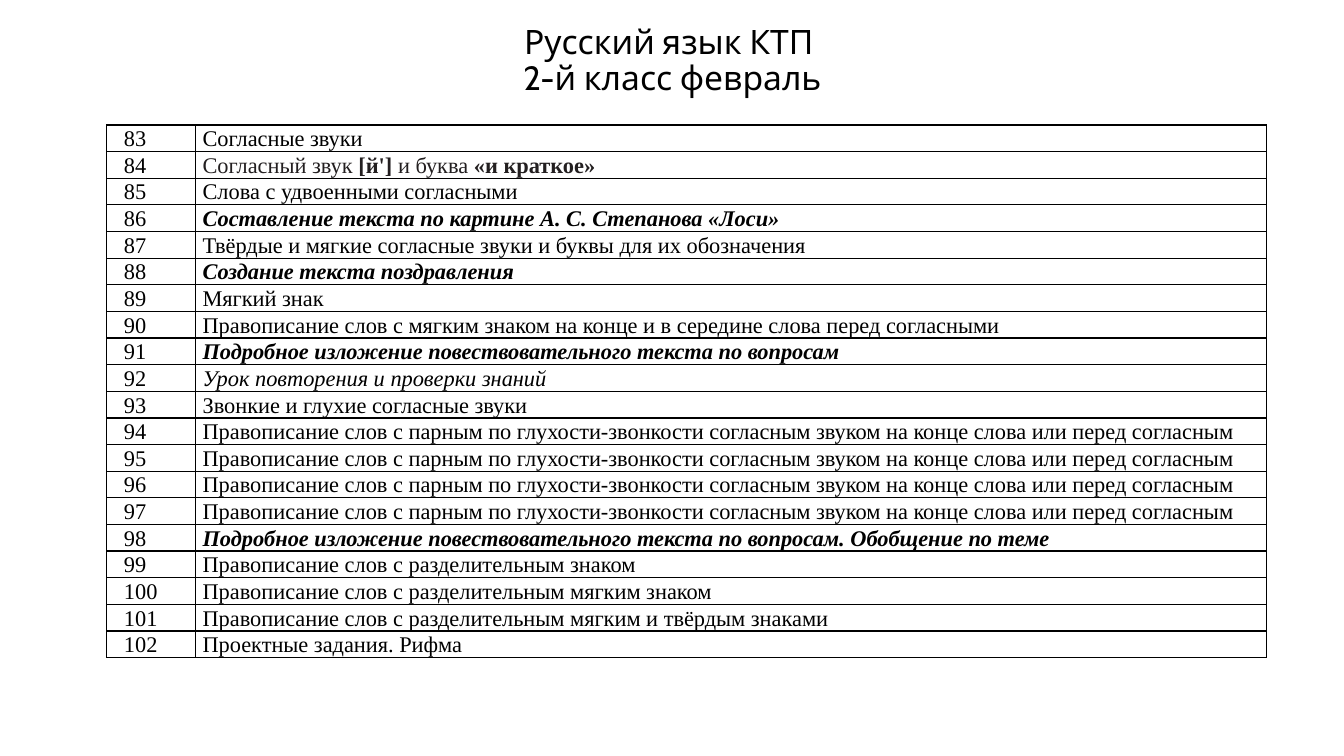
from lxml import etree
from pptx import Presentation
from pptx.dml.color import RGBColor
from pptx.enum.text import MSO_ANCHOR, PP_ALIGN
from pptx.oxml.ns import qn
from pptx.util import Pt

SCALE = 9144
BLACK = RGBColor(0x00, 0x00, 0x00)
CHARCOAL = RGBColor(0x23, 0x1F, 0x20)
MIDDLE = MSO_ANCHOR.MIDDLE
CENTER = PP_ALIGN.CENTER
LEFT = PP_ALIGN.LEFT
TITLE_ONLY = 5

FIRST_LESSON = 83
NUMBER_WIDTH = 88
ROW_HEIGHT = 26
PLAIN, BOLD, ITALIC, BOLD_ITALIC = (False, False), (True, False), (False, True), (True, True)
PAIRED_CONSONANTS = (
    "Правописание слов с парным по глухости-звонкости согласным звуком "
    "на конце слова или перед согласным"
)
SHORT_I = [
    ("Согласный звук ", PLAIN),
    ("[й']", BOLD),
    (" и буква ", PLAIN),
    ("«и краткое»", BOLD),
]
LESSONS = [
    ("Согласные звуки", PLAIN),
    (SHORT_I, PLAIN),
    ("Слова с удвоенными согласными", PLAIN),
    ("Составление текста по картине А. С. Степанова «Лоси»", BOLD_ITALIC),
    ("Твёрдые и мягкие согласные звуки и буквы для их обозначения", PLAIN),
    ("Создание текста поздравления", BOLD_ITALIC),
    ("Мягкий знак", PLAIN),
    ("Правописание слов с мягким знаком на конце и в середине слова перед согласными", PLAIN),
    ("Подробное изложение повествовательного текста по вопросам", BOLD_ITALIC),
    ("Урок повторения и проверки знаний", ITALIC),
    ("Звонкие и глухие согласные звуки", PLAIN),
    *[(PAIRED_CONSONANTS, PLAIN)] * 4,
    ("Подробное изложение повествовательного текста по вопросам. Обобщение по теме", BOLD_ITALIC),
    ("Правописание слов с разделительным знаком", PLAIN),
    ("Правописание слов с разделительным мягким знаком", PLAIN),
    ("Правописание слов с разделительным мягким и твёрдым знаками", PLAIN),
    ("Проектные задания. Рифма", PLAIN),
]


def px(length):
    return length * SCALE


def set_font(font, name, size, color):
    font.name = name
    font.size = Pt(size)
    font.color.rgb = color


def add_heading(slide, left, top, width, height):
    heading = slide.shapes.title
    heading.left, heading.top = px(left), px(top)
    heading.width, heading.height = px(width), px(height)
    frame = heading.text_frame
    frame.vertical_anchor = MIDDLE
    frame.word_wrap = True
    paragraph = frame.paragraphs[0]
    paragraph.text = "Русский язык КТП \v2-й класс февраль"
    paragraph.alignment = CENTER
    paragraph.line_spacing = 0.9
    set_font(paragraph.font, "Cabin", 24, BLACK)


def add_borders(cell):
    properties = cell._tc.get_or_add_tcPr()
    for position, side in enumerate(("lnL", "lnR", "lnT", "lnB")):
        line = etree.Element(qn(f"a:{side}"), w=str(Pt(1)))
        fill = etree.SubElement(line, qn("a:solidFill"))
        etree.SubElement(fill, qn("a:srgbClr"), val=str(BLACK))
        properties.insert(position, line)


def format_cell(cell, indent=0):
    cell.margin_left = cell.margin_right = px(7)
    cell.margin_top = cell.margin_bottom = 0
    cell.fill.background()
    add_borders(cell)
    paragraph = cell.text_frame.paragraphs[0]
    paragraph._p.get_or_add_pPr().set("marL", str(px(indent)))
    paragraph.alignment = LEFT
    paragraph.line_spacing = 1.07
    paragraph.space_after = Pt(8)
    return paragraph


def write_topic(paragraph, topic, style):
    if isinstance(topic, str):
        paragraph.text = topic
        set_font(paragraph.font, "Times New Roman", 16, BLACK)
        paragraph.font.bold, paragraph.font.italic = style
        return
    set_font(paragraph.font, "Times New Roman", 16, CHARCOAL)
    for text, (bold, italic) in topic:
        run = paragraph.add_run()
        run.text = text
        run.font.bold, run.font.italic = bold, italic


def add_plan(slide, left, top, width):
    height = ROW_HEIGHT * len(LESSONS)
    plan = slide.shapes.add_table(
        len(LESSONS), 2, px(left), px(top), px(width), px(height)
    ).table
    plan.first_row = False
    plan.horz_banding = False
    plan.columns[0].width = px(NUMBER_WIDTH)
    plan.columns[1].width = px(width - NUMBER_WIDTH)
    for row, (topic, style) in enumerate(LESSONS):
        number = format_cell(plan.cell(row, 0), indent=10)
        write_topic(number, str(FIRST_LESSON + row), PLAIN)
        write_topic(format_cell(plan.cell(row, 1)), topic, style)


def main():
    presentation = Presentation()
    presentation.slide_width = px(1333)
    presentation.slide_height = px(750)
    slide = presentation.slides.add_slide(presentation.slide_layouts[TITLE_ONLY])
    add_heading(slide, 92, 17, 1150, 88)
    add_plan(slide, 106, 124, 1150)
    presentation.save("out.pptx")


if __name__ == "__main__":
    main()
